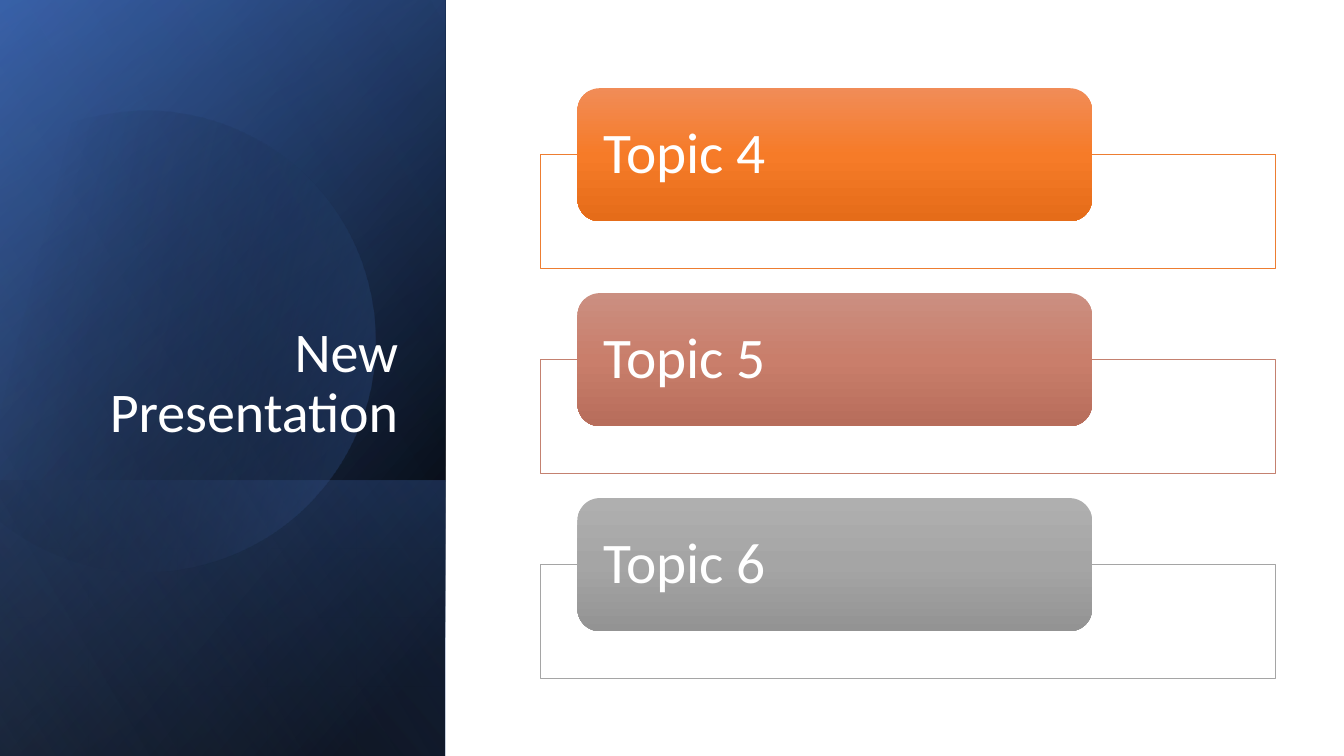
import math
from lxml import etree
from pptx import Presentation
from pptx.dml.color import RGBColor
from pptx.enum.shapes import MSO_SHAPE
from pptx.enum.text import MSO_ANCHOR, PP_ALIGN
from pptx.oxml.ns import qn
from pptx.util import Pt

RECT, ROUND = MSO_SHAPE.RECTANGLE, MSO_SHAPE.ROUNDED_RECTANGLE
MIDDLE, BOTTOM = MSO_ANCHOR.MIDDLE, MSO_ANCHOR.BOTTOM
LEFT, RIGHT = PP_ALIGN.LEFT, PP_ALIGN.RIGHT

WHITE = RGBColor(0xFF, 0xFF, 0xFF)
BLACK = RGBColor(0x00, 0x00, 0x00)
BLUE = RGBColor(0x44, 0x72, 0xC4)
NAVY = RGBColor(0x2F, 0x55, 0x97)
PALE = RGBColor(0x8F, 0xAA, 0xDC)
ORANGE = RGBColor(0xED, 0x7D, 0x31)
ORANGES = [RGBColor(0xF1, 0x8C, 0x57), RGBColor(0xF6, 0x7B, 0x28), RGBColor(0xE5, 0x6C, 0x19)]
ROSE = RGBColor(0xC4, 0x81, 0x70)
ROSES = [RGBColor(0xCB, 0x8F, 0x81), RGBColor(0xC9, 0x7E, 0x6B), RGBColor(0xB7, 0x6D, 0x5B)]
GRAY = RGBColor(0xA5, 0xA5, 0xA5)
GRAYS = [RGBColor(0xAF, 0xAF, 0xAF), GRAY, RGBColor(0x93, 0x93, 0x93)]


def shade(shape, angle, stops):
    shape.shadow.inherit = False
    shape.line.fill.background()
    shape.fill.background()
    props = shape._element.spPr
    grad = etree.Element(qn("a:gradFill"), rotWithShape="1")
    items = etree.SubElement(grad, qn("a:gsLst"))
    for spot, color, alpha in stops:
        stop = etree.SubElement(items, qn("a:gs"), pos=str(spot * 1000))
        tint = etree.SubElement(stop, qn("a:srgbClr"), val=str(color))
        if alpha < 100:
            etree.SubElement(tint, qn("a:alpha"), val=str(alpha * 1000))
    etree.SubElement(grad, qn("a:lin"), ang=str(angle * 60000), scaled="0")
    props.replace(props.find(qn("a:noFill")), grad)


def write(box, text, size, anchor, align):
    frame = box.text_frame
    frame.word_wrap = True
    frame.vertical_anchor = anchor
    frame.text = text
    line = frame.paragraphs[0]
    line.alignment = align
    line.line_spacing = 0.9
    font = line.runs[0].font
    font.name, font.size = "Calibri", Pt(size)
    font.color.rgb = WHITE


deck = Presentation()
deck.slide_width, deck.slide_height = Pt(960), Pt(540)
slide = deck.slides.add_slide(deck.slide_layouts[6])
shapes = slide.shapes

FULL = (-111, 111, 540, 318)
FOOT = (60.5, 282.5, 197, 318)
panels = [
    (FULL, 50, [(8, BLACK, 100), (100, NAVY, 100)]),
    (FULL, 30, [(0, BLACK, 0), (99, BLUE, 46)]),
    (FOOT, 130, [(2, BLUE, 29), (100, BLACK, 30)]),
    "disc",
    (FULL, 120, [(0, BLACK, 0), (99, PALE, 11)]),
]

TURN = 16.1
BOX_X, BOX_Y, BOX_W, BOX_H = -39.6, 76.3, 307.4, 329
OUTLINE = [
    ("moveTo", [(107.3, 79.2)]),
    ("cubicBezTo", [(177.1, 80.6), (241.2, 127.4), (261.4, 198)]),
    ("cubicBezTo", [(286.6, 285.8), (236.2, 376.6), (149, 401.8)]),
    ("cubicBezTo", [(94.3, 417.6), (38.2, 403.9), (-2.2, 370.1)]),
    ("lnTo", [(-10.8, 362.2)]),
    ("lnTo", [(-10.8, 126)]),
    ("lnTo", [(0, 115.9)]),
    ("cubicBezTo", [(16.6, 102.2), (36, 92.2), (57.6, 85.7)]),
    ("cubicBezTo", [(74.2, 81.4), (90.7, 79.2), (107.3, 79.2)]),
    ("close", []),
]

for panel in panels:
    if panel == "disc":
        right, base = BOX_X + BOX_W, BOX_Y + BOX_H
        maker = shapes.build_freeform(Pt(BOX_X), Pt(BOX_Y))
        maker.add_line_segments([(Pt(right), Pt(BOX_Y)), (Pt(right), Pt(base)), (Pt(BOX_X), Pt(base))])
        disc = maker.convert_to_shape()
        curve = next(disc._element.iter(qn("a:path")))
        for part in list(curve):
            curve.remove(part)
        cos, sin = math.cos(math.radians(TURN)), math.sin(math.radians(TURN))
        for move, points in OUTLINE:
            part = etree.SubElement(curve, qn("a:" + move))
            for x, y in points:
                x, y = x - BOX_X - BOX_W / 2, y - BOX_Y - BOX_H / 2
                across = BOX_W / 2 + x * cos - y * sin
                down = BOX_H / 2 + x * sin + y * cos
                etree.SubElement(part, qn("a:pt"), x=str(int(Pt(across))), y=str(int(Pt(down))))
        disc.rotation = 360 - TURN
        shade(disc, 30, [(29, BLACK, 0), (100, BLUE, 43)])
    else:
        place, angle, stops = panel
        block = shapes.add_shape(RECT, *map(Pt, place))
        block.rotation = 90
        block._element.spPr.xfrm.set("flipH", "1")
        shade(block, angle, stops)

title = shapes.add_textbox(Pt(46), Pt(132.8), Pt(245.5), Pt(188.6))
write(title, "New Presentation", 40, BOTTOM, RIGHT)

topics = [
    ("Topic 4", ORANGE, ORANGES),
    ("Topic 5", ROSE, ROSES),
    ("Topic 6", GRAY, GRAYS),
]
TOP, PITCH = 63, 146.4

for row, (name, edge, tones) in enumerate(topics):
    top = TOP + row * PITCH
    frame = shapes.add_shape(RECT, Pt(386), Pt(top + 47.5), Pt(525), Pt(81.5))
    frame.shadow.inherit = False
    frame.fill.solid()
    frame.fill.fore_color.rgb = WHITE
    tint = frame._element.spPr.find(qn("a:solidFill"))[0]
    etree.SubElement(tint, qn("a:alpha"), val="90000")
    frame.line.color.rgb = edge
    frame.line.width = Pt(0.5)

    card = shapes.add_shape(ROUND, Pt(412.5), Pt(top), Pt(367.5), Pt(95))
    shade(card, 90, [(spot, tone, 100) for spot, tone in zip((0, 50, 100), tones)])

    label = shapes.add_textbox(Pt(417), Pt(top + 4.6), Pt(358), Pt(85.7))
    write(label, name, 41, MIDDLE, LEFT)
    inner = label.text_frame
    inner.margin_left = inner.margin_right = Pt(13.9)
    inner.margin_top = inner.margin_bottom = 0

deck.save("out.pptx")
